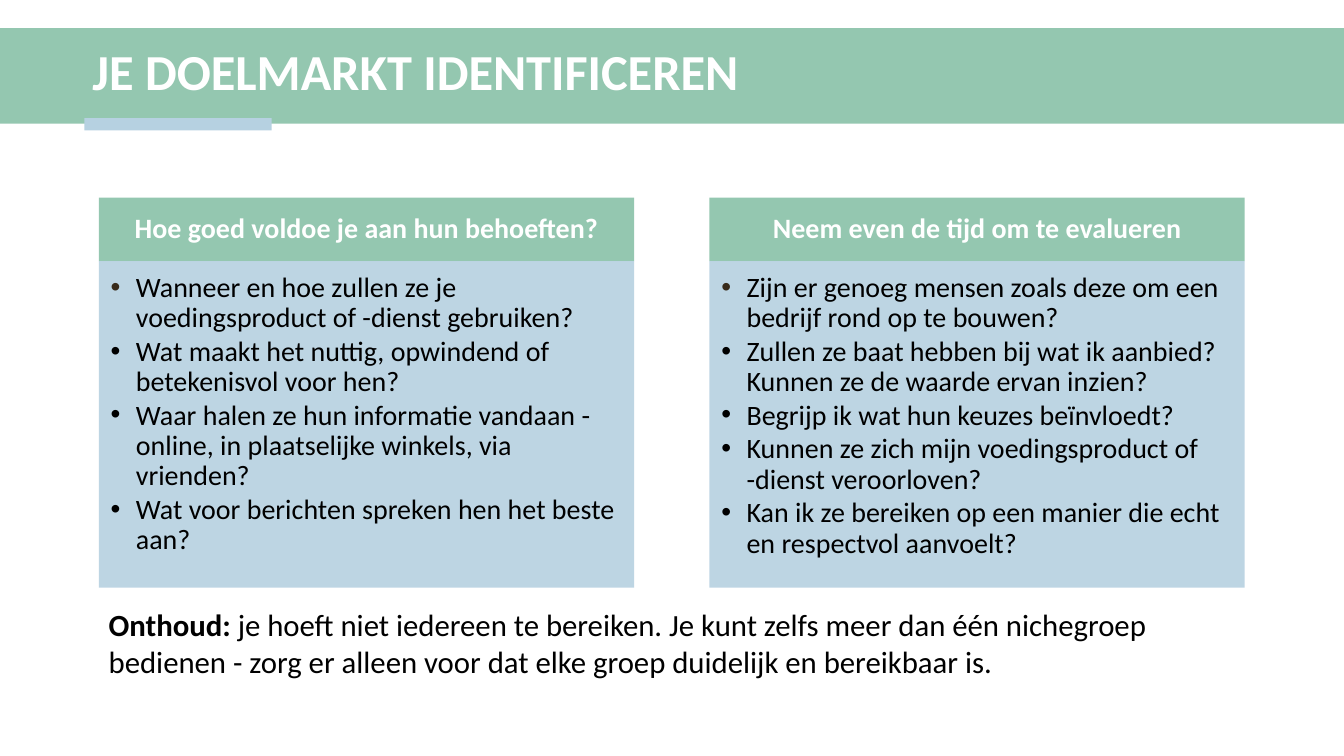
from lxml.etree import SubElement
from pptx import Presentation
from pptx.dml.color import RGBColor
from pptx.enum.shapes import MSO_SHAPE
from pptx.enum.text import MSO_ANCHOR, PP_ALIGN
from pptx.oxml.ns import qn
from pptx.util import Cm, Pt

TITLE = "JE DOELMARKT IDENTIFICEREN"
COLUMNS = [
    ("Hoe goed voldoe je aan hun behoeften?", [
        "Wanneer en hoe zullen ze je voedingsproduct of -dienst gebruiken?",
        "Wat maakt het nuttig, opwindend of betekenisvol voor hen?",
        "Waar halen ze hun informatie vandaan - online, in plaatselijke winkels, via vrienden?",
        "Wat voor berichten spreken hen het beste aan?",
    ]),
    ("Neem even de tijd om te evalueren", [
        "Zijn er genoeg mensen zoals deze om een bedrijf rond op te bouwen?",
        "Zullen ze baat hebben bij wat ik aanbied? Kunnen ze de waarde ervan inzien?",
        "Begrijp ik wat hun keuzes beïnvloedt?",
        "Kunnen ze zich mijn voedingsproduct of -dienst veroorloven?",
        "Kan ik ze bereiken op een manier die echt en respectvol aanvoelt?",
    ]),
]
REMINDER = [
    ("Onthoud: ", True),
    ("je hoeft niet iedereen te bereiken. Je kunt zelfs meer dan één nichegroep "
     "bedienen - zorg er alleen voor dat elke groep duidelijk en bereikbaar is.", False),
]

FONT = "Calibri"
GREEN = RGBColor(0x94, 0xC7, 0xB0)
BLUE = RGBColor(0xB6, 0xD1, 0xE1)
WHITE = RGBColor(0xFF, 0xFF, 0xFF)
BLACK = RGBColor(0, 0, 0)
BROWN = "382B1B"

SLIDE_WIDTH, SLIDE_HEIGHT = 33.87, 19.05
LEFT, TOP = 2.49, 4.98
COLUMN_WIDTH, COLUMN_STEP = 13.49, 15.39
HEADER_HEIGHT, BODY_HEIGHT = 1.6, 8.23


def add_rectangle(slide, left, top, width, height, color):
    shape = slide.shapes.add_shape(
        MSO_SHAPE.RECTANGLE, Cm(left), Cm(top), Cm(width), Cm(height))
    shape.shadow.inherit = False
    shape.fill.solid()
    shape.fill.fore_color.rgb = color
    shape.line.fill.background()
    return shape


def add_text_box(slide, left, top, width, height):
    frame = slide.shapes.add_textbox(Cm(left), Cm(top), Cm(width), Cm(height)).text_frame
    frame.word_wrap = True
    return frame


def set_insets(frame, left, top, right, bottom):
    frame.margin_left, frame.margin_top = Cm(left), Cm(top)
    frame.margin_right, frame.margin_bottom = Cm(right), Cm(bottom)


def set_font(paragraph, size, color, bold=None):
    font = paragraph.font
    font.name, font.size, font.bold = FONT, Pt(size), bold
    font.color.rgb = color


def add_bullet(paragraph, color=None):
    properties = paragraph._p.get_or_add_pPr()
    properties.set("marL", str(Cm(0.635)))
    properties.set("indent", str(-Cm(0.635)))
    if color:
        bullet_color = SubElement(properties, qn("a:buClr"))
        SubElement(bullet_color, qn("a:srgbClr"), val=color)
    SubElement(properties, qn("a:buFont"), typeface="Arial")
    SubElement(properties, qn("a:buChar"), char="•")


def add_column(slide, left, heading, questions):
    header = add_rectangle(slide, left, TOP, COLUMN_WIDTH, HEADER_HEIGHT, GREEN)
    frame = header.text_frame
    set_insets(frame, 0.41, 0.23, 0.41, 0.23)
    paragraph = frame.paragraphs[0]
    paragraph.text = heading
    paragraph.alignment = PP_ALIGN.CENTER
    paragraph.line_spacing = 0.9
    set_font(paragraph, 20, WHITE, True)

    body = add_rectangle(
        slide, left, TOP + HEADER_HEIGHT, COLUMN_WIDTH, BODY_HEIGHT, BLUE)
    fill_color = body._element.spPr.find(qn("a:solidFill"))[0]
    SubElement(fill_color, qn("a:alpha"), val="90000")
    frame = body.text_frame
    frame.vertical_anchor = MSO_ANCHOR.TOP
    set_insets(frame, 0.3, 0.3, 0.41, 0.43)
    for index, question in enumerate(questions):
        paragraph = frame.add_paragraph() if index else frame.paragraphs[0]
        paragraph.text = question
        paragraph.alignment = PP_ALIGN.LEFT
        paragraph.line_spacing = 0.9
        paragraph.space_after = Pt(2.5)
        add_bullet(paragraph, None if index else BROWN)
        set_font(paragraph, 20, BLACK)


def main():
    presentation = Presentation()
    presentation.slide_width = Cm(SLIDE_WIDTH)
    presentation.slide_height = Cm(SLIDE_HEIGHT)
    slide = presentation.slides.add_slide(presentation.slide_layouts[6])

    add_rectangle(slide, 0, 0.71, SLIDE_WIDTH, 2.41, GREEN)
    add_rectangle(slide, 2.13, 2.98, 4.72, 0.31, BLUE)
    title = add_text_box(slide, 2.08, 0.86, 30.3, 2.01)
    title.vertical_anchor = MSO_ANCHOR.MIDDLE
    paragraph = title.paragraphs[0]
    paragraph.text = TITLE
    paragraph.line_spacing = 0.9
    set_font(paragraph, 36, WHITE, True)

    for index, (heading, questions) in enumerate(COLUMNS):
        add_column(slide, LEFT + index * COLUMN_STEP, heading, questions)

    reminder = add_text_box(slide, LEFT, 15.14, COLUMN_STEP + COLUMN_WIDTH, 2.13)
    paragraph = reminder.paragraphs[0]
    for text, bold in REMINDER:
        run = paragraph.add_run()
        run.text = text
        run.font.bold = bold
    set_font(paragraph, 22, BLACK)

    presentation.save("out.pptx")


if __name__ == "__main__":
    main()
